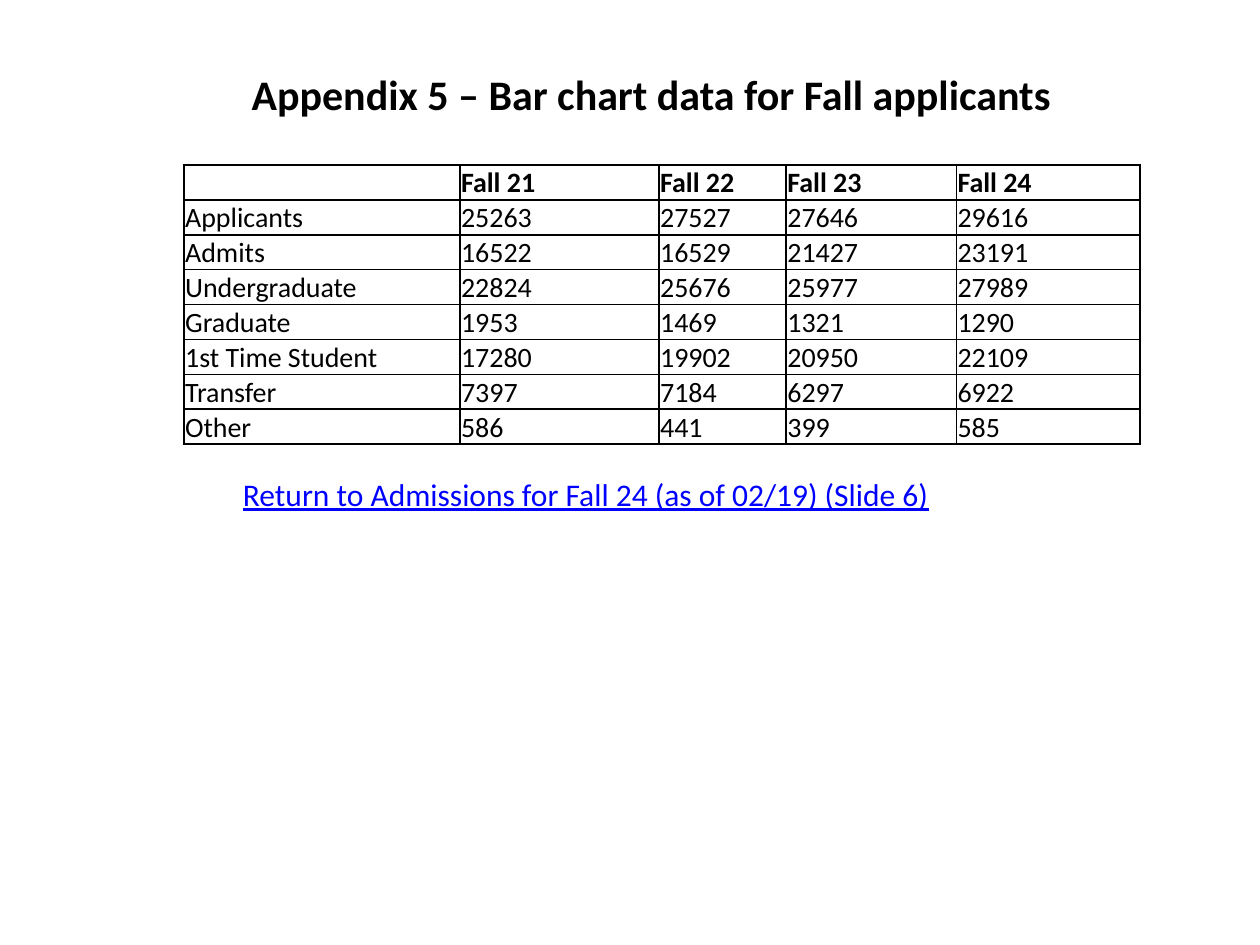
import dataclasses

import lxml.etree
import pptx
import pptx.dml.color
import pptx.enum.text
import pptx.oxml
import pptx.oxml.ns
import pptx.util

Inches = pptx.util.Inches


@dataclasses.dataclass(frozen=True)
class Theme:
    font: str = "Calibri"
    text: str = "000000"
    link: str = "0000FF"
    border: str = "000000"
    title_size: int = 24
    table_size: int = 16
    link_size: int = 18


theme = Theme()


def style_font(paragraph, size, color, bold=False):
    font = paragraph.font
    font.name = theme.font
    font.size = pptx.util.Pt(size)
    font.bold = bold
    font.color.rgb = pptx.dml.color.RGBColor.from_string(color)


def add_borders(cell):
    properties = cell._tc.get_or_add_tcPr()
    namespace = pptx.oxml.ns.nsdecls("a")
    for position, side in enumerate(("lnL", "lnR", "lnT", "lnB")):
        line = pptx.oxml.parse_xml(
            f'<a:{side} {namespace} w="12700"><a:solidFill>'
            f'<a:srgbClr val="{theme.border}"/></a:solidFill></a:{side}>'
        )
        properties.insert(position, line)


deck = pptx.Presentation()
deck.slide_width = Inches(10)
deck.slide_height = Inches(7.5)
page = deck.slides.add_slide(deck.slide_layouts[6])

link_box = page.shapes.add_textbox(Inches(1.83), Inches(3.72), Inches(7.83), Inches(0.42))
link_box.text_frame.word_wrap = True
link_paragraph = link_box.text_frame.paragraphs[0]
link_paragraph.text = "Return to Admissions for Fall 24 (as of 02/19) (Slide 6)"
style_font(link_paragraph, theme.link_size, theme.link)
link_paragraph.font.underline = True

rows = [
    ("", "Fall 21", "Fall 22", "Fall 23", "Fall 24"),
    ("Applicants", 25263, 27527, 27646, 29616),
    ("Admits", 16522, 16529, 21427, 23191),
    ("Undergraduate", 22824, 25676, 25977, 27989),
    ("Graduate", 1953, 1469, 1321, 1290),
    ("1st Time Student", 17280, 19902, 20950, 22109),
    ("Transfer", 7397, 7184, 6297, 6922),
    ("Other", 586, 441, 399, 585),
]
column_widths = (2.19, 1.58, 1.01, 1.35, 1.46)

table = page.shapes.add_table(
    len(rows), len(column_widths), Inches(1.46), Inches(1.31), Inches(7.58), Inches(2.21)
).table
table.first_row = False
table.horz_banding = False
for column, width in zip(table.columns, column_widths):
    column.width = Inches(width)

for row_number, values in enumerate(rows):
    for column_number, value in enumerate(values):
        cell = table.cell(row_number, column_number)
        cell.margin_left = cell.margin_right = cell.margin_top = Inches(0.01)
        cell.margin_bottom = Inches(0)
        if row_number and column_number:
            cell.vertical_anchor = pptx.enum.text.MSO_ANCHOR.BOTTOM
        cell.fill.background()
        add_borders(cell)
        paragraph = cell.text_frame.paragraphs[0]
        if value != "":
            paragraph.text = str(value)
        else:
            end = lxml.etree.SubElement(paragraph._p, pptx.oxml.ns.qn("a:endParaRPr"))
            end.set("sz", str(theme.table_size * 100))
        style_font(paragraph, theme.table_size, theme.text, bold=row_number == 0)

title_box = page.shapes.add_textbox(Inches(0.67), Inches(0.28), Inches(9), Inches(0.92))
title_frame = title_box.text_frame
title_frame.word_wrap = True
title_frame.margin_left = title_frame.margin_right = Inches(0)
title_frame.vertical_anchor = pptx.enum.text.MSO_ANCHOR.MIDDLE
title_paragraph = title_frame.paragraphs[0]
title_paragraph.text = "Appendix 5 – Bar chart data for Fall applicants"
title_paragraph.alignment = pptx.enum.text.PP_ALIGN.CENTER
style_font(title_paragraph, theme.title_size, theme.text, bold=True)

deck.save("out.pptx")
